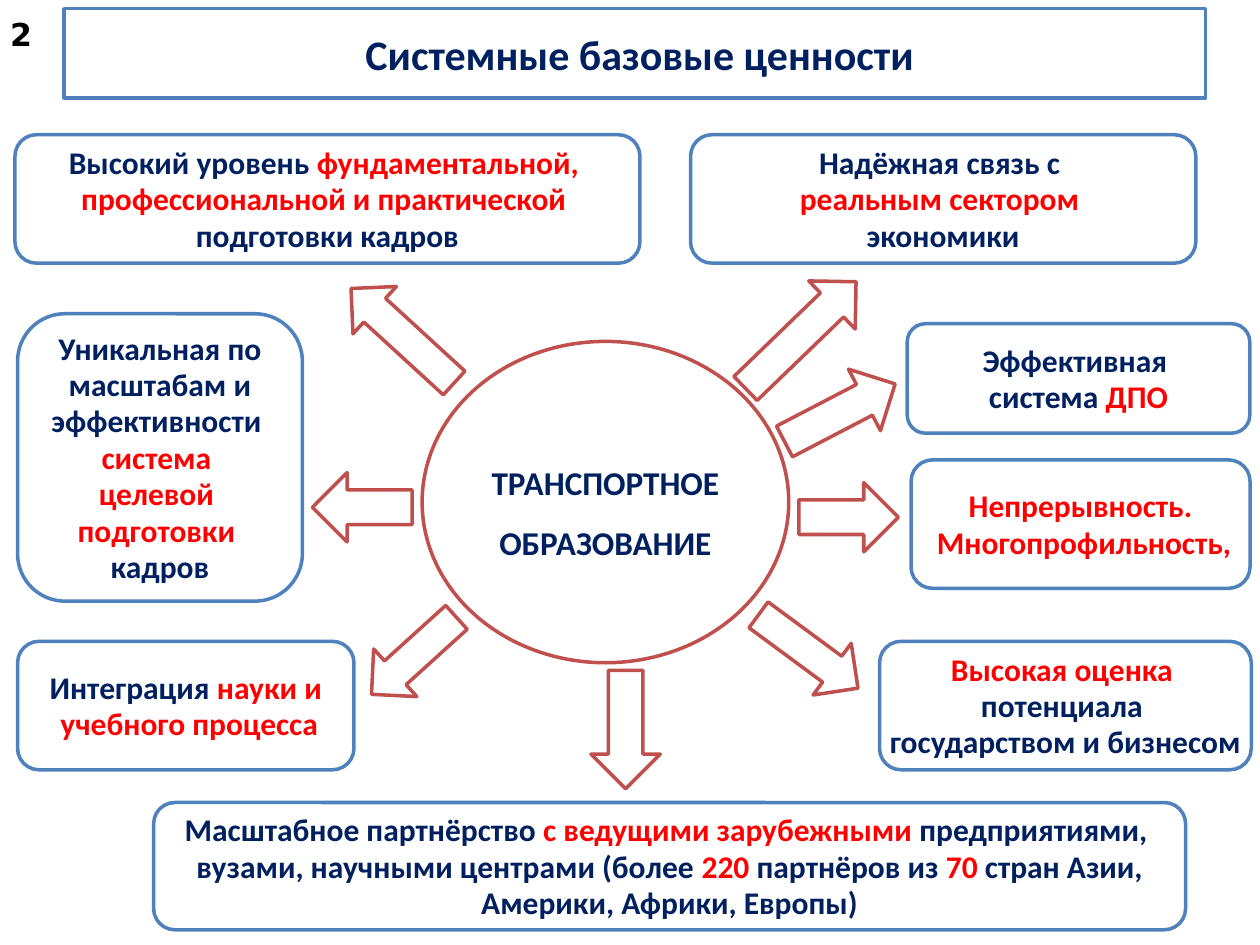
"""Build the slide on the core values of transport education."""
from pptx import Presentation
from pptx.dml.color import RGBColor
from pptx.enum import shapes, text
from pptx.util import Pt

NAVY = RGBColor(0x00, 0x20, 0x60)
RED = RGBColor(0xFF, 0x00, 0x00)
BLUE = RGBColor(0x4F, 0x81, 0xBD)
BRICK = RGBColor(0xC0, 0x50, 0x4D)
WHITE = RGBColor(0xFF, 0xFF, 0xFF)
BLACK = RGBColor(0x00, 0x00, 0x00)

NUMBER = ("2", (0, 7, 24, 25))
TITLE = (" Системные базовые ценности", (36.7, 5, 652.3, 51))
HUB = (["ТРАНСПОРТНОЕ", "ОБРАЗОВАНИЕ"], (241.2, 195.1, 209.5, 183.6))

# Text between asterisks is red.
CARDS = [
    ((394.6, 77, 288.7, 73.4),
     ["Надёжная связь с ", "*реальным сектором *", "экономики"]),
    ((8.6, 77, 357.1, 73.4),
     ["Высокий уровень *фундаментальной, *",
      "*профессиональной и практической *", "подготовки кадров"]),
    ((10.1, 179.3, 162.7, 164.2),
     ["Уникальная по", " масштабам и ", "эффективности ", "*система *",
      "*целевой *", "*подготовки *", "кадров"]),
    ((518.4, 185, 195.8, 62.6),
     ["Эффективная ", "система *ДПО*"]),
    ((10.1, 366.5, 192.2, 73.4),
     ["Интеграция *науки и*", "* учебного процесса*"]),
    ((502.6, 366.5, 212.4, 73.4),
     ["*Высокая оценка *", "потенциала ", "государством и бизнесом"]),
    ((520.6, 262.8, 193.7, 73.4),
     ["*Непрерывность.*", "* Многопрофильность,*"]),
    ((87.8, 458.6, 589.7, 72.7),
     ["Масштабное партнёрство *с ведущими зарубежными *предприятиями, ",
      "вузами, научными центрами (более *220* партнёров из *70 *стран Азии,",
      "Америки, Африки, Европы)"]),
]

ARROWS = [
    ((438.5, 147.6, 38.2, 87.8), 46),
    ((211.7, 151.9, 36.7, 79.9), 312.5),
    ((460.1, 200.2, 39.6, 71.3), 62.5),
    ((218.2, 342, 36.7, 65.5), 227.8),
    ((187.2, 261.4, 39.6, 56.9), 270),
    ((443.5, 337, 36.7, 70.6), 126.4),
    ((465.1, 267.1, 39.6, 56.9), 90),
    ((337.7, 383, 39.6, 67.7), 180),
]


def outline(sp, color):
    sp.fill.solid()
    sp.fill.fore_color.rgb = WHITE
    sp.line.color.rgb = color
    sp.line.width = Pt(2)


def add_shape(s, kind, box, color):
    sp = s.shapes.add_shape(kind, *map(Pt, box))
    sp.shadow.inherit = False
    outline(sp, color)
    return sp


def write(sp, lines, size, spacing=None, font="Calibri", color=NAVY):
    tf = sp.text_frame
    tf.word_wrap = False
    tf.auto_size = text.MSO_AUTO_SIZE.NONE
    tf.vertical_anchor = text.MSO_ANCHOR.MIDDLE
    for i, line in enumerate(lines):
        p = tf.add_paragraph() if i else tf.paragraphs[0]
        p.alignment = text.PP_ALIGN.CENTER
        p.line_spacing = spacing
        p.font.name, p.font.size, p.font.bold = font, Pt(size), True
        p.font.color.rgb = color
        for j, part in enumerate(line.split("*")):
            if part:
                r = p.add_run()
                r.text = part
                r.font.color.rgb = RED if j % 2 else color


def main():
    prs = Presentation()
    prs.slide_width, prs.slide_height = Pt(720), Pt(540)
    s = prs.slides.add_slide(prs.slide_layouts[5])

    title, box = TITLE
    sp = s.shapes.title
    sp.left, sp.top, sp.width, sp.height = map(Pt, box)
    outline(sp, BLUE)
    write(sp, [title], 24)

    lines, box = HUB
    write(add_shape(s, shapes.MSO_SHAPE.OVAL, box, BRICK), lines, 19, 1.5)

    for box, angle in ARROWS:
        add_shape(s, shapes.MSO_SHAPE.UP_ARROW, box, BRICK).rotation = angle

    for box, lines in CARDS:
        sp = add_shape(s, shapes.MSO_SHAPE.ROUNDED_RECTANGLE, box, BLUE)
        write(sp, lines, 18, Pt(20.8))

    number, box = NUMBER
    sp = s.shapes.add_textbox(*map(Pt, box))
    sp.text_frame.margin_left = sp.text_frame.margin_right = 0
    write(sp, [number], 18, font="DejaVu Sans", color=BLACK)

    prs.save("out.pptx")


if __name__ == "__main__":
    main()
